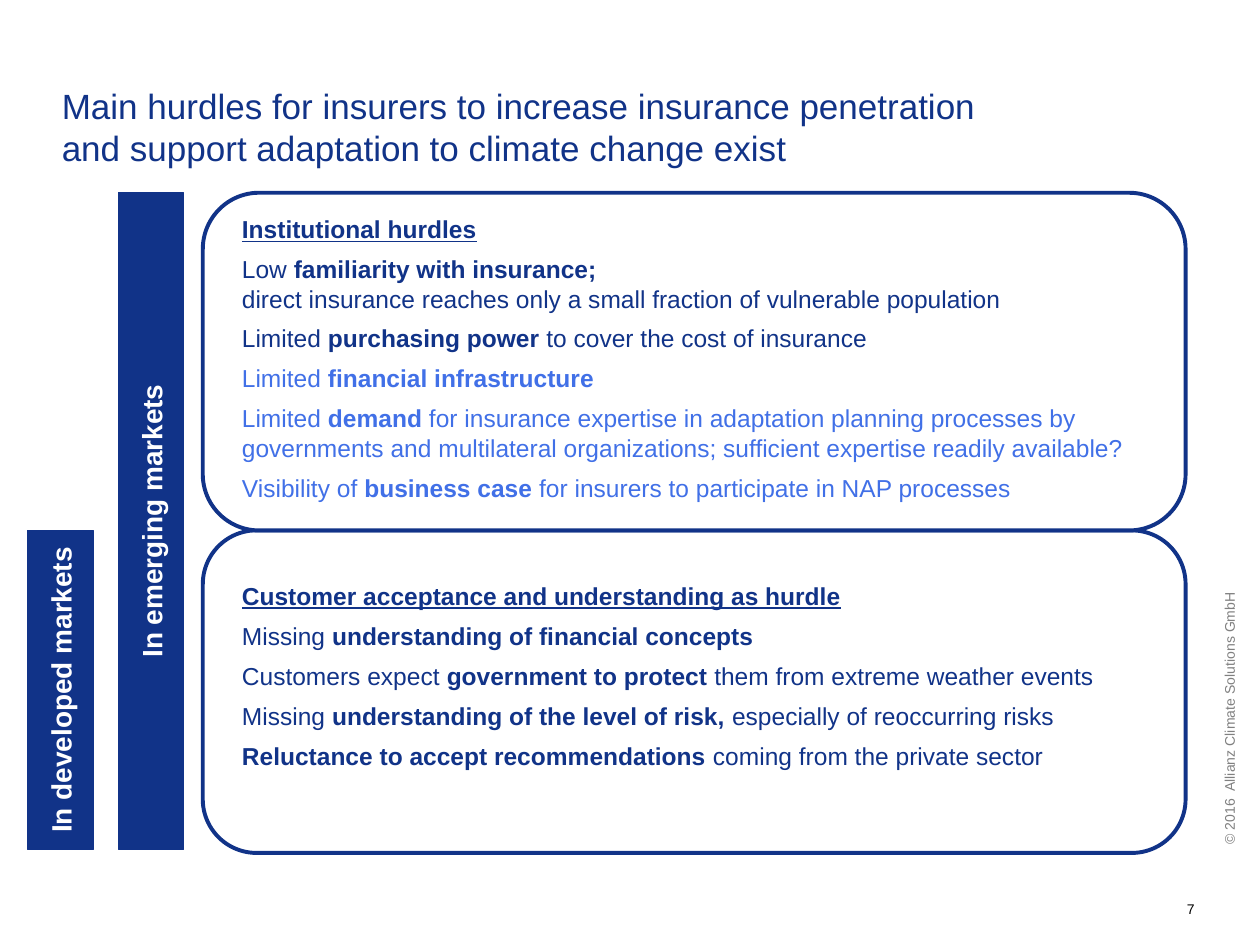
from pptx import Presentation
from pptx.dml.color import RGBColor
from pptx.enum import shapes, text
from pptx.oxml.ns import qn
from pptx.util import Inches, Pt

NAVY = RGBColor(0x11, 0x33, 0x88)
BLUE = RGBColor(0x41, 0x70, 0xE7)
GREY = RGBColor(0x80, 0x80, 0x80)
BLACK = RGBColor(0, 0, 0)
WHITE = RGBColor(0xFF, 0xFF, 0xFF)
FONT = "Arial"

# Each entry: text with **bold** parts and \v line breaks, then its colour
INSTITUTIONAL = [
    ("Low **familiarity with insurance; **\vdirect insurance reaches only "
     "a small fraction of vulnerable population", NAVY),
    ("Limited** purchasing power **to cover the cost of insurance", NAVY),
    ("Limited** financial infrastructure**", BLUE),
    ("Limited** demand **for insurance expertise in adaptation planning "
     "processes by governments and multilateral organizations; sufficient "
     "expertise readily available?", BLUE),
    ("Visibility of **business case **for insurers to participate in NAP "
     "processes", BLUE),
]
CUSTOMER = [
    ("Missing **understanding of financial concepts**", NAVY),
    ("Customers expect **government to protect** them from extreme weather "
     "events", NAVY),
    ("Missing **understanding of the level of risk,** especially of "
     "reoccurring risks", NAVY),
    ("**Reluctance to accept recommendations **coming from the private "
     "sector", NAVY),
]


def place(shape, box):
    shape.left, shape.top, shape.width, shape.height = map(Inches, box)


def style(font, size, color, bold=False):
    font.name, font.size, font.bold = FONT, Pt(size), bold
    font.color.rgb = color


def set_margins(frame, margin):
    frame.margin_left = frame.margin_right = Inches(margin)
    frame.margin_top = frame.margin_bottom = Inches(margin)


def add_heading(slide, box):
    heading = slide.shapes.title
    place(heading, box)
    frame = heading.text_frame
    set_margins(frame, 0)
    frame.vertical_anchor = text.MSO_ANCHOR.TOP
    frame.auto_size = text.MSO_AUTO_SIZE.NONE
    frame.text = ("Main hurdles for insurers to increase insurance "
                  "penetration and support adaptation to climate change exist")
    paragraph = frame.paragraphs[0]
    paragraph.alignment = text.PP_ALIGN.LEFT
    style(paragraph.runs[0].font, 20, NAVY)


def add_hurdle(paragraph, marked, color):
    """Write one paragraph, switching weight at each ** mark."""
    for index, part in enumerate(marked.split("**")):
        for line, words in enumerate(part.split("\v")):
            if line:
                paragraph.add_line_break()
            if words:
                run = paragraph.add_run()
                run.text = words
                style(run.font, 14, color, bold=index % 2 == 1)


def add_panel(slide, box, hurdles, text_top, text_height, heading, entries):
    """Rounded frame with a list placeholder on top of it."""
    left, _, width, _ = box
    panel = slide.shapes.add_shape(
        shapes.MSO_SHAPE.ROUNDED_RECTANGLE, *map(Inches, box))
    panel.shadow.inherit = False
    panel.fill.solid()
    panel.fill.fore_color.rgb = WHITE
    panel.line.color.rgb = NAVY
    panel.line.width = Pt(2.25)

    # Bring the list in front of its frame
    panel._element.addnext(hurdles._element)
    place(hurdles, (left + 0.21, text_top, width - 0.25, text_height))
    frame = hurdles.text_frame
    frame.auto_size = text.MSO_AUTO_SIZE.NONE
    frame.vertical_anchor = text.MSO_ANCHOR.TOP
    for index, (marked, color) in enumerate(
            [(f"**{heading}**", NAVY)] + entries):
        paragraph = frame.add_paragraph() if index else frame.paragraphs[0]
        properties = paragraph._p.get_or_add_pPr()
        properties.set("marL", "0")
        properties.set("indent", "0")
        properties.append(properties.makeelement(qn("a:buNone"), {}))
        paragraph.space_before, paragraph.space_after = Pt(0), Pt(6)
        add_hurdle(paragraph, marked, color)
    frame.paragraphs[0].runs[0].font.underline = True


def add_vertical_bar(slide, box, label, size, color, fill, centred):
    """Bar read from bottom to top; box is its place as seen."""
    left, top, width, height = box
    shift = (height - width) / 2
    bar = slide.shapes.add_shape(
        shapes.MSO_SHAPE.RECTANGLE,
        *map(Inches, (left - shift, top + shift, height, width)))
    bar.rotation = 270
    bar.shadow.inherit = False
    bar.fill.solid()
    bar.fill.fore_color.rgb = fill
    bar.line.fill.background()
    frame = bar.text_frame
    frame.word_wrap = not centred
    frame.vertical_anchor = (text.MSO_ANCHOR.MIDDLE if centred
                             else text.MSO_ANCHOR.TOP)
    frame.text = label
    paragraph = frame.paragraphs[0]
    paragraph.alignment = (text.PP_ALIGN.CENTER if centred
                           else text.PP_ALIGN.LEFT)
    style(paragraph.runs[0].font, size, color, bold=centred)
    return bar


def add_market_bar(slide, box, label):
    bar = add_vertical_bar(slide, box, label, 16, WHITE, NAVY, True)
    bar.line.color.rgb = NAVY
    bar.line.width = Pt(0.5)


def add_page_number(slide, box):
    frame = slide.shapes.add_textbox(*map(Inches, box)).text_frame
    set_margins(frame, 0)
    frame.word_wrap = False
    frame.vertical_anchor = text.MSO_ANCHOR.BOTTOM
    frame.text = "7"
    frame.paragraphs[0].alignment = text.PP_ALIGN.RIGHT
    style(frame.paragraphs[0].runs[0].font, 8, BLACK)


def main():
    deck = Presentation()
    deck.slide_width, deck.slide_height = Inches(10), Inches(7.5)
    slide = deck.slides.add_slide(deck.slide_layouts.get_by_name("Two Content"))
    institutional, customer = list(slide.placeholders)[1:3]

    add_heading(slide, (0.49, 0.67, 7.42, 0.67))

    # Panels share one edge, where the developed markets bar starts
    top, split = 1.53, 4.21
    add_panel(slide, (1.61, split, 7.8, 2.56), customer, 4.56, 1.62,
              "Customer acceptance and understanding as hurdle", CUSTOMER)
    add_panel(slide, (1.61, top, 7.8, split - top), institutional, 1.65, 2.41,
              "Institutional hurdles", INSTITUTIONAL)

    # Market bars end on the same line
    bottom = 6.74
    add_market_bar(slide, (0.22, split, 0.52, bottom - split),
                   "In developed markets")
    add_market_bar(slide, (0.94, top, 0.52, bottom - top),
                   "In emerging markets")

    # Copyright line and page number
    add_vertical_bar(slide, (9.64, 3.68, 0.24, 3.15),
                     " © 2016  Allianz Climate Solutions GmbH",
                     8, GREY, WHITE, False)
    add_page_number(slide, (9.42, 7.15, 0.06, 0.13))
    deck.save("out.pptx")


if __name__ == "__main__":
    main()
